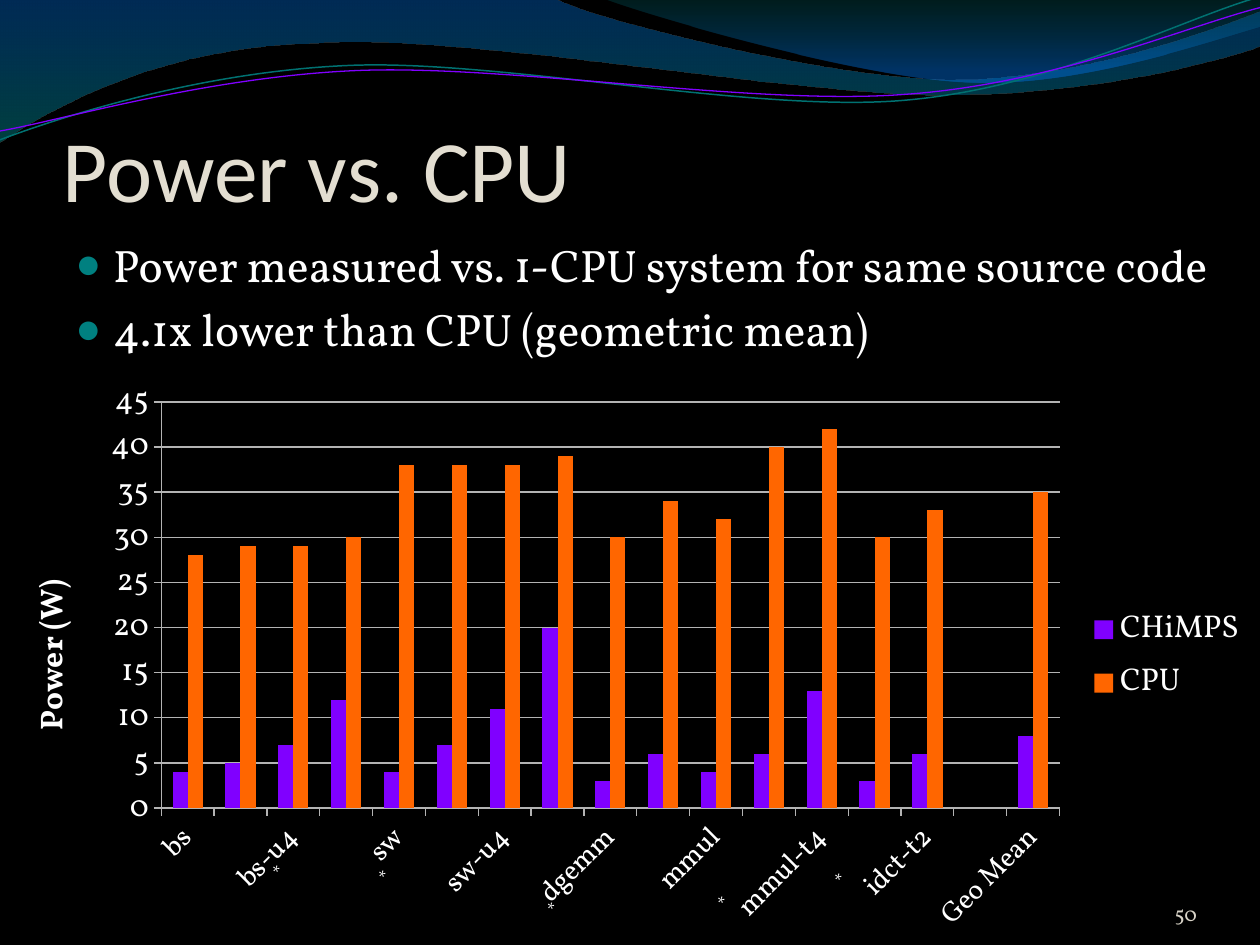
import math

from lxml import etree
from pptx import Presentation, util as u
from pptx.chart.data import CategoryChartData
from pptx.dml.color import RGBColor
from pptx.enum import chart as ch, text as t
from pptx.oxml import parse_xml
from pptx.oxml.ns import nsdecls, qn

COLORS = {
    "back": "000000", "white": "FFFFFF", "title": "E3DED1", "number": "D9D4C8",
    "bullet": "008080", "teal": "007171", "violet": "8000FF", "orange": "FF6600",
    "grid": "B3B3B3",
}
COLS, ROWS = 100, 75
BODY_FONT, TITLE_FONT = "Vollkorn", "Calibri"
TILT = 357.3

WAVE_FILLS = [
    ((-0.1, -0.1, 100.2, 11.4),
     [(0, 0), (44, -0.1), (47.6, 1.7, 66.4, 6.3, 75.8, 6.3),
      (85.3, 6.3, 95.8, 2.6, 100, 0.9), (100.1, 3.6),
      (98.3, 4.4, 87, 7.6, 74.6, 7.5), (62.2, 7.5, 38.2, 2.8, 25.7, 3.4),
      (12.9, 3.6, 4.6, 8.3, -0.1, 11.3), (0, 0)],
     [(0, "005FBD", 45), (100, "007474", 55)]),
    ((47.9, -0.1, 52.1, 7),
     [(47.9, -0.1), (50.9, 1.1, 68.2, 6.2, 76.9, 6.5),
      (85.6, 6.9, 96.1, 3.2, 100, 2.1), (100, 0), (47.9, -0.1)],
     [(0, "005F5F", 30), (80, "0071E1", 45)]),
]
WAVE_LINES = [
    ((-0.2, 2.2, 100.2, 7.1),
     [(0, 11.1), (4.8, 9.3, 15.8, 5.7, 27.7, 5.2),
      (39.5, 4.7, 59.3, 8.9, 71.3, 8), (83.3, 7.1, 93.8, 1.5, 99.8, -0.2)],
     "teal", 0.85),
    ((-0.2, 3, 100.3, 5.8),
     [(0, 10.4), (4.7, 9.6, 16.4, 6.1, 28.3, 5.6),
      (40.3, 5.1, 59.7, 8.4, 71.7, 7.5), (83.6, 6.7, 94.1, 2.1, 100, 0.6)],
     "violet", 0.75),
]
CATEGORIES = ["bs", "bs-u2", "bs-u4", "bs-u8", "sw", "sw-u2", "sw-u4", "sw-u8",
              "dgemm", "dgemm-t2", "mmul", "mmul-t2", "mmul-t4", "idct",
              "idct-t2", "", "Geo Mean"]
SERIES = [
    ("CHiMPS", "violet", [4, 5, 7, 12, 4, 7, 11, 20, 3, 6, 4, 6, 13, 3, 6, None, 8]),
    ("CPU", "orange", [28, 29, 29, 30, 38, 38, 38, 39, 30, 34, 32, 40, 42, 30, 33, None, 35]),
]
STARS = [(20.3, 67.9, 3.3), (28.7, 68.3, 3.3), (42.1, 70.8, 2.5),
         (55.6, 70.3, 3.3), (64.9, 68.5, 3.3)]


def rgb(name):
    return RGBColor.from_string(COLORS[name])


def assign(obj, values):
    for key, value in values.items():
        setattr(obj, key, value)


class Deck:
    def __init__(self):
        self.prs = Presentation()
        assign(self.prs, {"slide_width": u.Inches(10), "slide_height": u.Inches(7.5)})
        self.s = self.prs.slides.add_slide(self.prs.slide_layouts[6])
        self.s.background.fill.solid()
        self.s.background.fill.fore_color.rgb = rgb("back")

    def x(self, cols):
        return round(self.prs.slide_width * cols / COLS)

    def y(self, rows):
        return round(self.prs.slide_height * rows / ROWS)

    def box(self, left, top, width, height):
        return self.x(left), self.y(top), self.x(width), self.y(height)

    def font(self, font, size, color, name=BODY_FONT, bold=False):
        assign(font, {"size": u.Pt(size), "name": name, "bold": bold})
        font.color.rgb = rgb(color)

    def curve(self, place, steps, rotation=0):
        left, top, width, height = self.box(*place)
        mid_x, mid_y, turn = left + width / 2, top + height / 2, math.radians(-rotation)

        def local(col, row):
            dx, dy = self.x(col) - mid_x, self.y(row) - mid_y
            return (round(dx * math.cos(turn) - dy * math.sin(turn) + width / 2),
                    round(dx * math.sin(turn) + dy * math.cos(turn) + height / 2))

        ends = [local(*step[-2:]) for step in steps]
        builder = self.s.shapes.build_freeform(*ends[0])
        builder.add_line_segments(ends[1:], close=ends[0] == ends[-1])
        sp = builder.convert_to_shape()
        outline = sp._element.spPr.find(qn("a:custGeom")).find(qn("a:pathLst"))[0]
        outline.set("w", str(width))
        outline.set("h", str(height))
        for node, step in zip(list(outline), steps):
            for pt in list(node):
                node.remove(pt)
            if len(step) == 6:
                node.tag = qn("a:cubicBezTo")
            for i in range(0, len(step), 2):
                px, py = local(*step[i:i + 2])
                etree.SubElement(node, qn("a:pt"), x=str(px), y=str(py))
        assign(sp, {"left": left, "top": top, "width": width, "height": height,
                    "rotation": rotation})
        sp.shadow.inherit = False
        return sp

    def wave_fill(self, place, steps, stops):
        sp = self.curve(place, steps)
        sp.line.fill.background()
        marks = "".join(
            f'<a:gs pos="{pos * 1000}"><a:srgbClr val="{color}">'
            f'<a:alpha val="{alpha * 1000}"/></a:srgbClr></a:gs>'
            for pos, color, alpha in stops)
        sp._element.spPr.find(qn("a:custGeom")).addnext(parse_xml(
            f'<a:gradFill {nsdecls("a")} rotWithShape="1"><a:gsLst>{marks}</a:gsLst>'
            '<a:lin ang="5400000" scaled="0"/></a:gradFill>'))

    def wave_line(self, place, steps, color, width):
        sp = self.curve(place, steps, TILT)
        sp.fill.background()
        sp.line.color.rgb = rgb(color)
        sp.line.width = u.Pt(width)

    def bullet(self, p):
        pPr = p._p.get_or_add_pPr()
        pPr.set("marL", str(u.Inches(0.3)))
        pPr.set("indent", str(u.Inches(-0.3)))
        color = etree.SubElement(pPr, qn("a:buClr"))
        etree.SubElement(color, qn("a:srgbClr"), val=COLORS["bullet"])
        etree.SubElement(pPr, qn("a:buSzPct"), val="95000")
        etree.SubElement(pPr, qn("a:buFont"), typeface="Arial")
        etree.SubElement(pPr, qn("a:buChar"), char="●")

    def text(self, place, lines, size, color, name=BODY_FONT, align=t.PP_ALIGN.LEFT,
             bullets=False, gap=0, **frame):
        tf = self.s.shapes.add_textbox(*self.box(*place)).text_frame
        assign(tf, {"word_wrap": True, **frame})
        for i, line in enumerate(lines):
            p = tf.add_paragraph() if i else tf.paragraphs[0]
            if bullets:
                self.bullet(p)
            assign(p, {"alignment": align, "space_before": u.Pt(gap if i else 0)})
            r = p.add_run()
            r.text = line
            self.font(r.font, size, color, name)

    def layout(self, before, target="", **percents):
        for old in before.getparent().findall(qn("c:layout")):
            old.getparent().remove(old)
        parts = target + '<c:xMode val="edge"/><c:yMode val="edge"/>' + "".join(
            f'<c:{key} val="{value / 100}"/>' for key, value in percents.items())
        before.addnext(parse_xml(f'<c:layout {nsdecls("c")}><c:manualLayout>{parts}'
                                 '</c:manualLayout></c:layout>'))

    def power_chart(self, place):
        data = CategoryChartData()
        data.categories = CATEGORIES
        for name, _, values in SERIES:
            data.add_series(name, values)
        chart = self.s.shapes.add_chart(
            ch.XL_CHART_TYPE.COLUMN_CLUSTERED, *self.box(*place), data).chart
        self.font(chart.font, 18, "white")
        assign(chart, {"has_title": False, "has_legend": True})
        plot = chart.plots[0]
        assign(plot, {"gap_width": 150, "overlap": 0, "vary_by_categories": False})
        for series, (_, color, _) in zip(plot.series, SERIES):
            series.format.fill.solid()
            series.format.fill.fore_color.rgb = rgb(color)
        cat, val = chart.category_axis, chart.value_axis
        assign(val, {"minimum_scale": 0, "maximum_scale": 45, "major_unit": 5,
                     "has_major_gridlines": True})
        for axis, size in ((cat, 16), (val, 18)):
            axis.major_tick_mark = ch.XL_TICK_MARK.OUTSIDE
            self.font(axis.tick_labels.font, size, "white")
            axis.format.line.color.rgb = rgb("grid")
        val.major_gridlines.format.line.color.rgb = rgb("grid")
        cat._element.find(qn("c:txPr")).find(qn("a:bodyPr")).set("rot", "-2700000")
        cat._element.find(qn("c:noMultiLvlLbl")).addprevious(
            parse_xml(f'<c:tickLblSkip {nsdecls("c")} val="2"/>'))
        title = val.axis_title
        r = title.text_frame.paragraphs[0].add_run()
        r.text = "Power (W)"
        self.font(r.font, 18, "white", bold=True)
        self.layout(title._element.find(qn("c:tx")), x=1.8, y=35.6)
        legend = chart.legend
        assign(legend, {"position": ch.XL_LEGEND_POSITION.RIGHT, "include_in_layout": False})
        self.font(legend.font, 18, "white")
        self.layout(legend._element.find(qn("c:legendPos")), x=86.1, y=40, w=13, h=20)
        area = plot._element.getparent()
        marker = etree.Element(qn("c:layout"))
        area.insert(0, marker)
        self.layout(plot._element, '<c:layoutTarget val="inner"/>',
                    x=12.8, y=5.9, w=71.3, h=70.4)
        area.insert(0, area.find(qn("c:layout")))


def main():
    deck = Deck()
    for wave in WAVE_FILLS:
        deck.wave_fill(*wave)
    for wave in WAVE_LINES:
        deck.wave_line(*wave)
    bottom = {"vertical_anchor": t.MSO_ANCHOR.BOTTOM, "margin_left": 0,
              "margin_right": 0, "margin_bottom": 0}
    deck.text((5, 5, 90, 12.5), ["Power vs. CPU"], 50, "title", TITLE_FONT, **bottom)
    deck.text((5, 18.3, 93.3, 48),
              ["Power measured vs. 1-CPU system for same source code",
               "4.1x lower than CPU (geometric mean)"],
              26, "white", bullets=True, gap=5.7)
    deck.text((86.7, 69.5, 8.3, 4), ["50"], 12, "number",
              align=t.PP_ALIGN.RIGHT, margin_top=0, **bottom)
    deck.power_chart((0, 29.2, 100, 45.8))
    for left, top, height in STARS:
        deck.text((left, top, 3.3, height), ["*"], 11, "white",
                  align=t.PP_ALIGN.CENTER, word_wrap=False)
    deck.prs.save("out.pptx")


if __name__ == "__main__":
    main()
